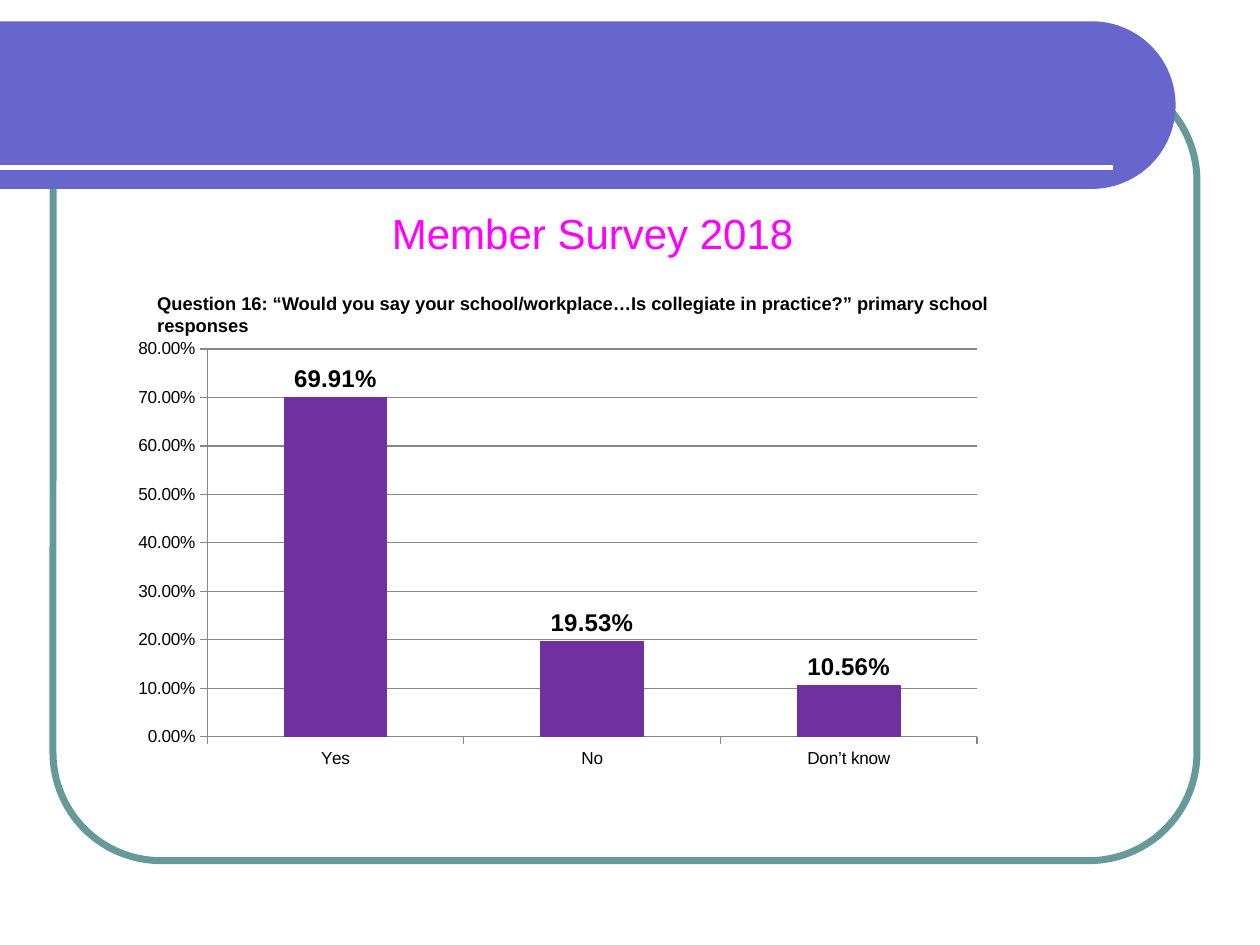
import math
from lxml import etree
from pptx import Presentation
from pptx import util as u
from pptx.chart.data import CategoryChartData
from pptx.dml.color import RGBColor
from pptx.enum import chart as ec, shapes, text
from pptx.oxml import parse_xml
from pptx.oxml.ns import qn

FONT = "Arial"
BLUE, TEAL, WHITE, GREY = "6666CC", "669999", "FFFFFF", "868686"
BLACK, PINK, PURPLE = "000000", "FF00FF", "7030A0"
QUESTION = ("Question 16: “Would you say your school/workplace…"
            "Is collegiate in practice?” primary school responses")
TEXTS = [
    (QUESTION, (2.92, 5.77, 18.85, 1.14), 10.5, BLACK, True, True),
    ("Member Survey 2018", (7.65, 4.06, 8.69, 1.27), 24, PINK, False, False),
]
ANSWERS = {"Yes": 0.6991, "No": 0.1953, "Don’t know": 0.1056}
FRAME = (1.07, 1.47, 23.06, 15.88)
CHART = (2.79, 6.6, 17.42, 8.89)
PLOT = {"x": 0.06, "y": 0.05, "w": 0.91, "h": 0.89}
BANNER_TOP, BANNER_RIGHT, BANNER_HEIGHT = 0.43, 23.7, 3.38
RULE_Y, RULE_RIGHT = 3.38, 22.43


def rgb(value):
    return RGBColor.from_string(value)


def cm(values):
    return [u.Cm(v) for v in values]


def style_font(font, size, color, bold=False):
    font.name, font.size, font.bold = FONT, u.Pt(size), bold
    font.color.rgb = rgb(color)


def add_frame(s):
    sp = s.shapes.add_shape(shapes.MSO_SHAPE.ROUNDED_RECTANGLE, *cm(FRAME))
    sp.adjustments[0] = 0.137
    sp.shadow.inherit = False
    sp.fill.background()
    sp.line.color.rgb = rgb(TEAL)
    sp.line.width = u.Pt(4)


def add_banner(s):
    radius = BANNER_HEIGHT / 2
    center_x, center_y = BANNER_RIGHT - radius, BANNER_TOP + radius
    angles = [math.radians(a) for a in range(-90, 91, 3)]
    arc = [(u.Cm(center_x + radius * math.cos(a)),
            u.Cm(center_y + radius * math.sin(a))) for a in angles]
    builder = s.shapes.build_freeform(0, u.Cm(BANNER_TOP))
    builder.add_line_segments(arc + [(0, u.Cm(BANNER_TOP + BANNER_HEIGHT))])
    sp = builder.convert_to_shape()
    sp.shadow.inherit = False
    sp.fill.solid()
    sp.fill.fore_color.rgb = rgb(BLUE)
    sp.line.fill.background()


def add_rule(s):
    line = s.shapes.add_connector(
        shapes.MSO_CONNECTOR.STRAIGHT, *cm((0, RULE_Y, RULE_RIGHT, RULE_Y)))
    line.line.color.rgb = rgb(WHITE)
    line.line.width = u.Pt(3)
    etree.SubElement(line._element.spPr, qn("a:effectLst"))


def add_text(s, words, box, size, color, bold, wrap):
    tf = s.shapes.add_textbox(*cm(box)).text_frame
    tf.word_wrap = wrap
    tf.auto_size = text.MSO_AUTO_SIZE.SHAPE_TO_FIT_TEXT
    r = tf.paragraphs[0].add_run()
    r.text = words
    style_font(r.font, size, color, bold)


def set_plot_layout(chart):
    area = chart._chartSpace.chart.plotArea
    for old in area.findall(qn("c:layout")):
        area.remove(old)
    sizes = "".join(f'<c:{k} val="{v}"/>' for k, v in PLOT.items())
    area.insert(0, parse_xml(
        '<c:layout xmlns:c="http://schemas.openxmlformats.org/drawingml/2006/chart">'
        '<c:manualLayout><c:layoutTarget val="inner"/><c:xMode val="edge"/>'
        f'<c:yMode val="edge"/>{sizes}</c:manualLayout></c:layout>'))


def add_survey_chart(s):
    data = CategoryChartData(number_format="0.00%")
    data.categories = list(ANSWERS)
    data.add_series("Series 1", list(ANSWERS.values()))
    chart = s.shapes.add_chart(
        ec.XL_CHART_TYPE.COLUMN_CLUSTERED, *cm(CHART), data).chart
    chart.has_legend = chart.has_title = False
    style_font(chart.font, 10, BLACK)
    set_plot_layout(chart)

    value_axis = chart.value_axis
    value_axis.minimum_scale, value_axis.maximum_scale = 0, 0.8
    value_axis.major_unit = 0.1
    value_axis.has_major_gridlines = True
    value_axis.tick_labels.number_format = "0.00%"
    value_axis.tick_labels.number_format_is_linked = False
    for axis in (value_axis, chart.category_axis):
        axis.major_tick_mark = ec.XL_TICK_MARK.OUTSIDE
    for part in (value_axis, chart.category_axis, value_axis.major_gridlines):
        part.format.line.color.rgb = rgb(GREY)
        part.format.line.width = u.Pt(0.75)

    plot = chart.plots[0]
    plot.gap_width = 150
    plot.vary_by_categories = False
    bars = plot.series[0]
    bars.format.fill.solid()
    bars.format.fill.fore_color.rgb = rgb(PURPLE)
    bars.format.line.color.rgb = rgb(PURPLE)
    bars.format.line.width = u.Pt(0.75)
    labels = bars.data_labels
    labels.show_value = True
    labels.number_format = "0.00%"
    labels.number_format_is_linked = False
    labels.position = ec.XL_LABEL_POSITION.OUTSIDE_END
    style_font(labels.font, 14, BLACK, True)


def main():
    prs = Presentation()
    prs.slide_width, prs.slide_height = cm((25.4, 19.05))
    s = prs.slides.add_slide(prs.slide_layouts[6])
    add_frame(s)
    add_banner(s)
    add_rule(s)
    for item in TEXTS:
        add_text(s, *item)
    add_survey_chart(s)
    prs.save("out.pptx")


if __name__ == "__main__":
    main()
